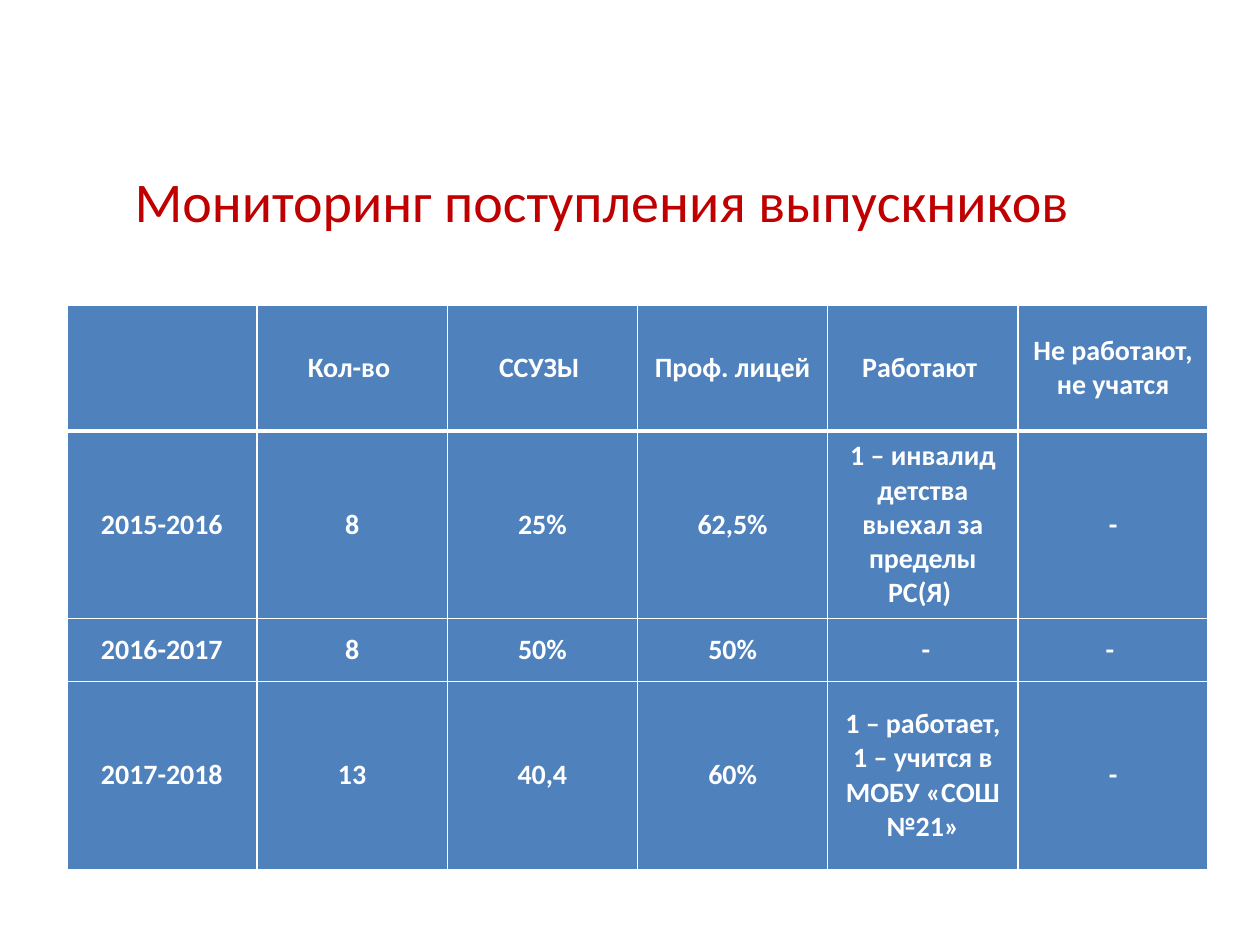
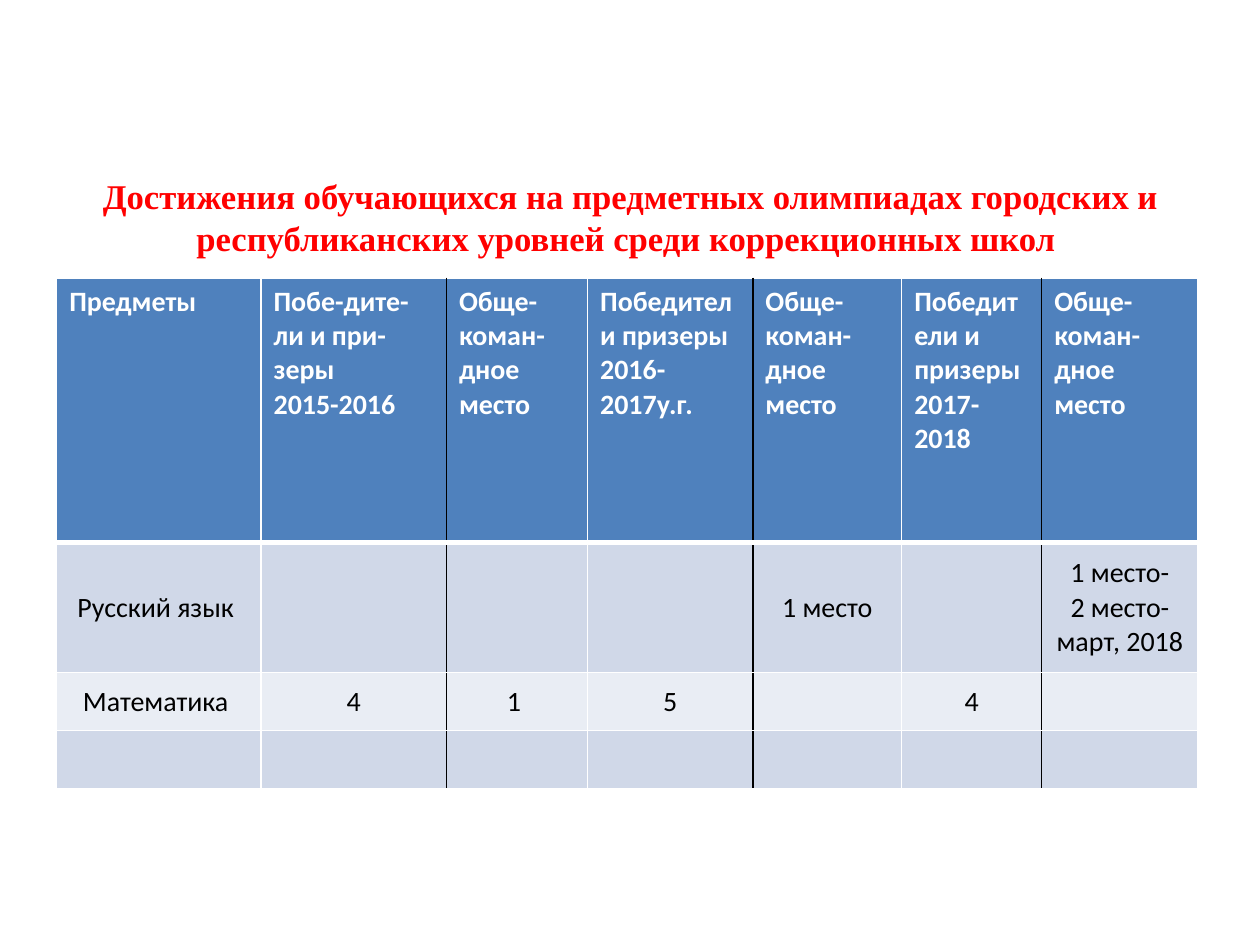
from dataclasses import dataclass

from lxml.etree import SubElement
from pptx import Presentation
from pptx.dml.color import RGBColor
from pptx.enum.text import MSO_ANCHOR, MSO_AUTO_SIZE, PP_ALIGN
from pptx.oxml.ns import qn
from pptx.util import Inches, Pt


@dataclass(frozen=True)
class Theme:
    heading_red: str = "C00000"
    bright_red: str = "FF0000"
    blue: str = "4F81BD"
    band_dark: str = "D0D8E8"
    band_light: str = "E9EDF4"
    white: str = "FFFFFF"
    black: str = "000000"
    body_font: str = "Calibri"
    serif_font: str = "Times New Roman"
    large_title: float = 32
    small_title: float = 19.8
    cell_size: float = 16
    thin: float = 1
    thick: float = 3


def assign(target, values):
    for name, value in values.items():
        setattr(target, name, value)


def split_length(total, weights):
    return [round(total * weight / sum(weights)) for weight in weights]


class Deck:
    def __init__(self, theme):
        self.theme = theme
        self.presentation = Presentation()
        assign(self.presentation, {"slide_width": Inches(10), "slide_height": Inches(7.5)})
        self.slide = None

    def box(self, left, top, width, height):
        across = self.presentation.slide_width / 100
        down = self.presentation.slide_height / 100
        return [round(length) for length in (left * across, top * down, width * across, height * down)]

    def set_text(self, text_frame, text, alignment, color, **font_values):
        text_frame.text = text
        for paragraph in text_frame.paragraphs:
            paragraph.alignment = alignment
            for run in paragraph.runs:
                assign(run.font, font_values)
                run.font.color.rgb = RGBColor.from_string(color)

    def add_slide(self, title, place, color, **font_values):
        self.slide = self.presentation.slides.add_slide(self.presentation.slide_layouts[5])
        shape = self.slide.shapes.title
        assign(shape, dict(zip(("left", "top", "width", "height"), self.box(*place))))
        assign(shape.text_frame, {
            "word_wrap": True,
            "auto_size": MSO_AUTO_SIZE.NONE,
            "vertical_anchor": MSO_ANCHOR.MIDDLE,
        })
        self.set_text(shape.text_frame, title, PP_ALIGN.CENTER, color, **font_values)

    def add_borders(self, cell, row, column, dark_pairs):
        theme = self.theme
        dark_left = dark_pairs and column > 0 and column % 2 == 0
        dark_right = dark_pairs and column % 2 == 1
        edges = {
            "lnL": (theme.black if dark_left else theme.white, theme.thin),
            "lnR": (theme.black if dark_right else theme.white, theme.thin),
            "lnT": (theme.white, theme.thick if row == 1 else theme.thin),
            "lnB": (theme.white, theme.thick if row == 0 else theme.thin),
        }
        properties = cell._tc.get_or_add_tcPr()
        for tag, (color, width) in edges.items():
            line = SubElement(properties, qn(f"a:{tag}"), w=str(Pt(width)))
            fill = SubElement(line, qn("a:solidFill"))
            SubElement(fill, qn("a:srgbClr"), val=color)

    def add_table(self, rows, place, column_weights, row_weights, cell_style,
                  cell_values=None, dark_pairs=False):
        left, top, width, height = self.box(*place)
        table = self.slide.shapes.add_table(
            len(rows), len(column_weights), left, top, width, height).table
        assign(table, {"first_row": False, "horz_banding": False})
        for column, column_width in zip(table.columns, split_length(width, column_weights)):
            column.width = column_width
        for row, row_height in zip(table.rows, split_length(height, row_weights)):
            row.height = row_height
        for row_index, texts in enumerate(rows):
            fill, color, bold, alignment, anchor = cell_style(row_index)
            for column_index, text in enumerate(texts):
                cell = table.cell(row_index, column_index)
                self.add_borders(cell, row_index, column_index, dark_pairs)
                cell.fill.solid()
                cell.fill.fore_color.rgb = RGBColor.from_string(fill)
                assign(cell, {"vertical_anchor": anchor, **(cell_values or {})})
                self.set_text(cell.text_frame, text, alignment, color, bold=bold,
                              size=Pt(self.theme.cell_size), name=self.theme.body_font)


def add_graduates(deck):
    theme = deck.theme
    deck.add_slide("Мониторинг поступления выпускников ", (3.3, 12.8, 90, 16.67),
                   theme.heading_red, size=Pt(theme.large_title), name=theme.body_font)
    rows = [
        ["", "Кол-во ", "ССУЗЫ ", "Проф. лицей", "Работают ", "Не работают, не учатся"],
        ["2015-2016", "8", "25%", "62,5%", "1 – инвалид детства выехал за пределы РС(Я) ", "-"],
        ["2016-2017", "8", "50%", "50%", " -", "- "],
        ["2017-2018", "13", "40,4", "60%", "1 – работает, 1 – учится в МОБУ «СОШ №21»", "-"],
    ]
    margins = {"margin_left": Inches(0.07), "margin_right": Inches(0.07),
               "margin_top": 0, "margin_bottom": 0}

    def cell_style(row):
        return theme.blue, theme.white, True, PP_ALIGN.CENTER, MSO_ANCHOR.MIDDLE

    deck.add_table(rows, (5.3, 32.27, 90.6, 59.73), [1] * 6, [1, 1.49, 0.5, 1.49],
                   cell_style, margins)


def add_olympiads(deck):
    theme = deck.theme
    deck.add_slide(
        "Достижения обучающихся на предметных олимпиадах городских и "
        "республиканских уровней среди коррекционных школ ",
        (5, 17.47, 90, 10.93), theme.bright_red,
        size=Pt(theme.small_title), name=theme.serif_font, bold=True)
    team_place = "Обще-коман-дное место"
    rows = [
        ["Предметы", "Побе-дите-\nли и при-зеры\n2015-2016", team_place,
         "Победители призеры\n2016-2017у.г.", team_place,
         "Победители и призеры\n2017-2018", team_place],
        ["Русский язык ", "", "", "", "1 место", "", "1 место-\n2 место- март, 2018"],
        ["Математика ", "4", "1 ", "5", "", "4", ""],
        [""] * 7,
    ]

    def cell_style(row):
        if row == 0:
            return theme.blue, theme.white, True, PP_ALIGN.LEFT, MSO_ANCHOR.TOP
        band = theme.band_dark if row % 2 else theme.band_light
        return band, theme.black, False, PP_ALIGN.CENTER, MSO_ANCHOR.MIDDLE

    deck.add_table(rows, (4.5, 29.47, 90.6, 54), [1.62, 1.47, 1.12, 1.31, 1.18, 1.11, 1.24],
                   [2.09, 1.03, 0.46, 0.46], cell_style, dark_pairs=True)


def main():
    deck = Deck(Theme())
    add_graduates(deck)
    add_olympiads(deck)
    deck.presentation.save("out.pptx")


if __name__ == "__main__":
    main()
